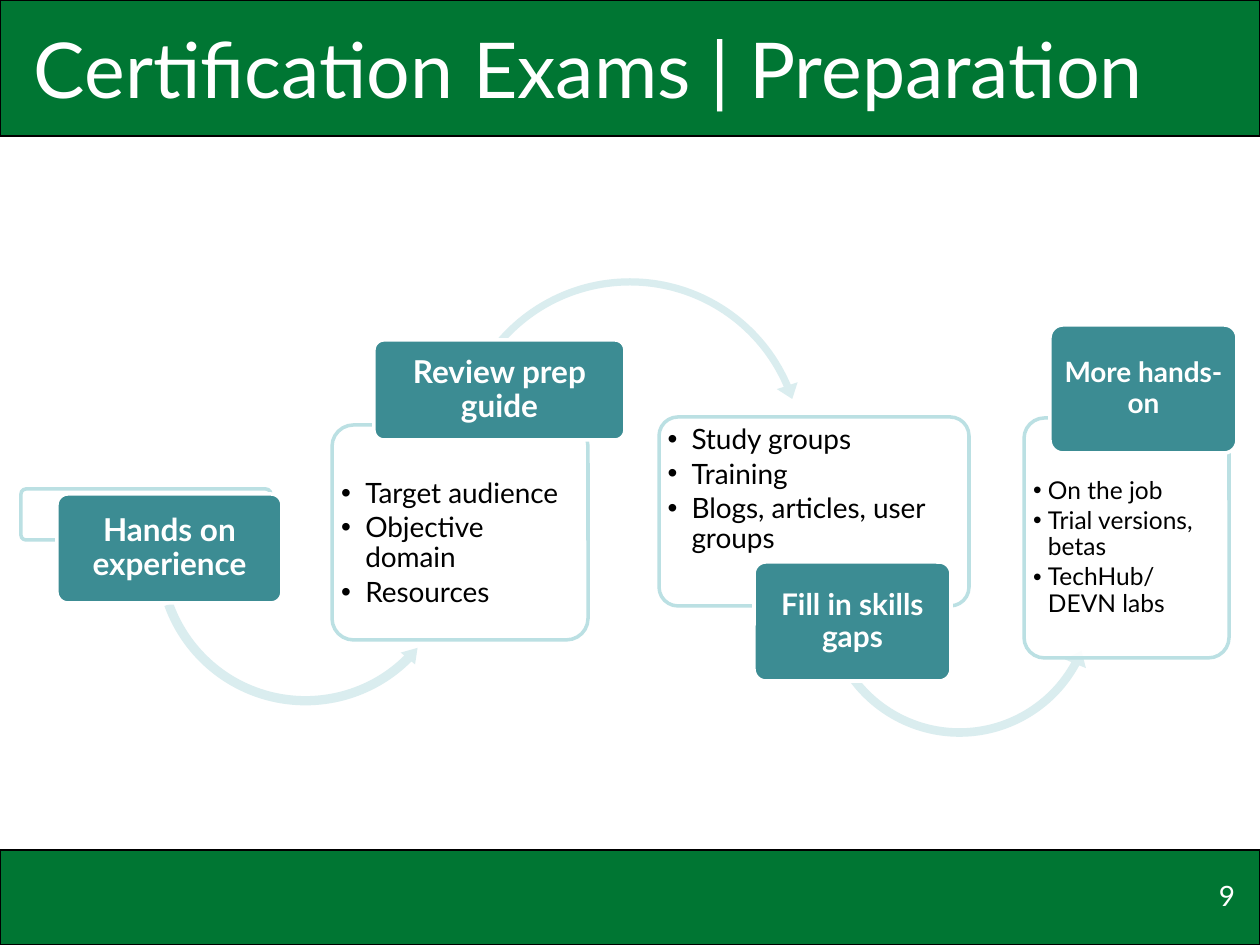
import pptx
import pptx.dml.color
import pptx.enum.shapes
import pptx.enum.text
import pptx.util
from lxml import etree

SHAPES = pptx.enum.shapes.MSO_SHAPE
ALIGN = pptx.enum.text.PP_ALIGN
ANCHOR = pptx.enum.text.MSO_ANCHOR
DRAWING = "{http://schemas.openxmlformats.org/drawingml/2006/main}"
EMU_PER_PX = 914400 / 126
WIDTH, HEIGHT = 1260, 945
FONT = "Lato"
GREEN, TEAL, PALE_TEAL, ARROW_TEAL = "007633", "3C8C93", "BBE0E3", "DAEDEF"
WHITE, BLACK = "FFFFFF", "000000"

# Boxes are left, top, width, height in px. Arrows end with thickness and head
# width (shares of the box) around the head, end and start angles in degrees.
STAGES = [
    {
        "card": (21, 489, 250, 51), "items": [], "text_top": 0, "item_size": 16, "indent": 24,
        "label": (57, 494, 225, 109), "title": "Hands on experience", "title_size": 18,
        "arrow": (SHAPES.LEFT_CIRCULAR_ARROW, (151, 401, 309, 309),
                  (0.03, 5.67, 45.16, 160.31, 0.03)),
    },
    {
        "card": (332, 425, 256, 215), "text_top": 48, "item_size": 16, "indent": 24,
        "items": ["Target audience", "Objective domain", "Resources"],
        "label": (374, 340, 251, 100), "title": "Review prep guide", "title_size": 18,
        "arrow": (SHAPES.CIRCULAR_ARROW, (448, 271, 364, 364),
                  (0.02, 4.77, 336.85, 220.81, 0.03)),
    },
    {
        "card": (659, 417, 310, 189), "text_top": 3, "item_size": 16, "indent": 24,
        "items": ["Study groups", "Training", "Blogs, articles, user groups"],
        "label": (754, 562, 197, 119), "title": "Fill in skills gaps", "title_size": 17,
        "arrow": (SHAPES.LEFT_CIRCULAR_ARROW, (816, 457, 287, 287),
                  (0.03, 6.13, 28.63, 143.32, 0.04)),
    },
    {
        "card": (1024, 418, 205, 240), "text_top": 54, "item_size": 14, "indent": 15,
        "items": ["On the job", "Trial versions, betas", "TechHub/DEVN labs"],
        "label": (1050, 325, 187, 128), "title": "More hands-on", "title_size": 16,
        "arrow": None,
    },
]


def px(length):
    return pptx.util.Emu(round(length * EMU_PER_PX))


def color(value):
    return pptx.dml.color.RGBColor.from_string(value)


def add_filled_shape(slide, kind, box, fill, line=None, line_width=2):
    shape = slide.shapes.add_shape(kind, *map(px, box))
    shape.shadow.inherit = False
    shape.fill.solid()
    shape.fill.fore_color.rgb = color(fill)
    if line:
        shape.line.color.rgb = color(line)
        shape.line.width = pptx.util.Pt(line_width)
    else:
        shape.line.fill.background()
    return shape


def format_frame(frame, margins, anchor):
    """Set the margins (left, top, right, bottom in px) and the anchor."""
    frame.word_wrap = True
    frame.vertical_anchor = anchor
    for side, margin in zip(("left", "top", "right", "bottom"), margins):
        setattr(frame, f"margin_{side}", px(margin))


def write(paragraph, text, size, text_color, alignment, bold=False):
    paragraph.text = text
    paragraph.alignment = alignment
    font = paragraph.runs[0].font
    settings = {"name": FONT, "size": pptx.util.Pt(size), "bold": bold}
    for name, value in settings.items():
        setattr(font, name, value)
    font.color.rgb = color(text_color)


def add_bullet(paragraph, indent):
    properties = paragraph._p.get_or_add_pPr()
    properties.set("marL", str(px(indent)))
    properties.set("indent", str(-px(indent)))
    etree.SubElement(properties, DRAWING + "buFont", typeface="Arial")
    etree.SubElement(properties, DRAWING + "buChar", char="•")


def add_header(slide, box):
    left, top, width, height = box
    add_filled_shape(slide, SHAPES.RECTANGLE, box, GREEN, BLACK, 0.75)
    title = slide.shapes.title
    slide.shapes._spTree.append(title._element)  # in front of the band
    title_box = {"left": left + 21, "top": top, "width": width - 32, "height": height}
    for name, value in title_box.items():
        setattr(title, name, px(value))
    format_frame(title.text_frame, (13, 6, 13, 6), ANCHOR.MIDDLE)
    write(title.text_frame.paragraphs[0], "Certification Exams | Preparation", 44, WHITE, ALIGN.LEFT)


def add_footer(slide, box, number):
    left, top, width, height = box
    add_filled_shape(slide, SHAPES.RECTANGLE, box, GREEN, BLACK, 0.75)
    number_box = (left + width - 306, top + 23, 294, 65)
    frame = slide.shapes.add_textbox(*map(px, number_box)).text_frame
    format_frame(frame, (13, 6, 13, 6), ANCHOR.TOP)
    write(frame.paragraphs[0], number, 16, WHITE, ALIGN.RIGHT)


def add_card(slide, box, items, text_top, size, indent):
    card = add_filled_shape(slide, SHAPES.ROUNDED_RECTANGLE, box, WHITE, PALE_TEAL)
    card.adjustments[0] = 0.1
    fill = card._element.spPr.find(f"{DRAWING}solidFill/{DRAWING}srgbClr")
    etree.SubElement(fill, DRAWING + "alpha", val="90000")
    frame = card.text_frame
    format_frame(frame, (3, text_top, 3, 0), ANCHOR.TOP)
    for index, item in enumerate(items):
        paragraph = frame.add_paragraph() if index else frame.paragraphs[0]
        paragraph.line_spacing = 0.9
        paragraph.space_after = pptx.util.Pt(0.15 * size)
        add_bullet(paragraph, indent)
        write(paragraph, item, size, BLACK, ALIGN.LEFT)


def add_arrow(slide, kind, box, adjustments):
    arrow = add_filled_shape(slide, kind, box, ARROW_TEAL)
    thickness, head_angle, end_angle, start_angle, head_width = adjustments
    degree = 60000 / 100000
    values = (thickness, head_angle * degree, end_angle * degree, start_angle * degree, head_width)
    for index, value in enumerate(values):
        arrow.adjustments[index] = value


def add_label(slide, box, text, size):
    label = add_filled_shape(slide, SHAPES.ROUNDED_RECTANGLE, box, TEAL, WHITE)
    label.adjustments[0] = 0.1
    format_frame(label.text_frame, (5, 3, 5, 3), ANCHOR.MIDDLE)
    paragraph = label.text_frame.paragraphs[0]
    paragraph.line_spacing = 0.9
    write(paragraph, text, size, WHITE, ALIGN.CENTER, bold=True)


def add_stage(slide, stage):
    add_card(slide, stage["card"], stage["items"], stage["text_top"],
             stage["item_size"], stage["indent"])
    if stage["arrow"]:
        add_arrow(slide, *stage["arrow"])
    add_label(slide, stage["label"], stage["title"], stage["title_size"])


def main():
    presentation = pptx.Presentation()
    presentation.slide_width, presentation.slide_height = px(WIDTH), px(HEIGHT)
    slide = presentation.slides.add_slide(presentation.slide_layouts.get_by_name("Title Only"))
    add_header(slide, (0, 0, WIDTH, 136))
    add_footer(slide, (0, 850, WIDTH, 95), "9")
    for stage in STAGES:
        add_stage(slide, stage)
    presentation.save("out.pptx")


if __name__ == "__main__":
    main()
